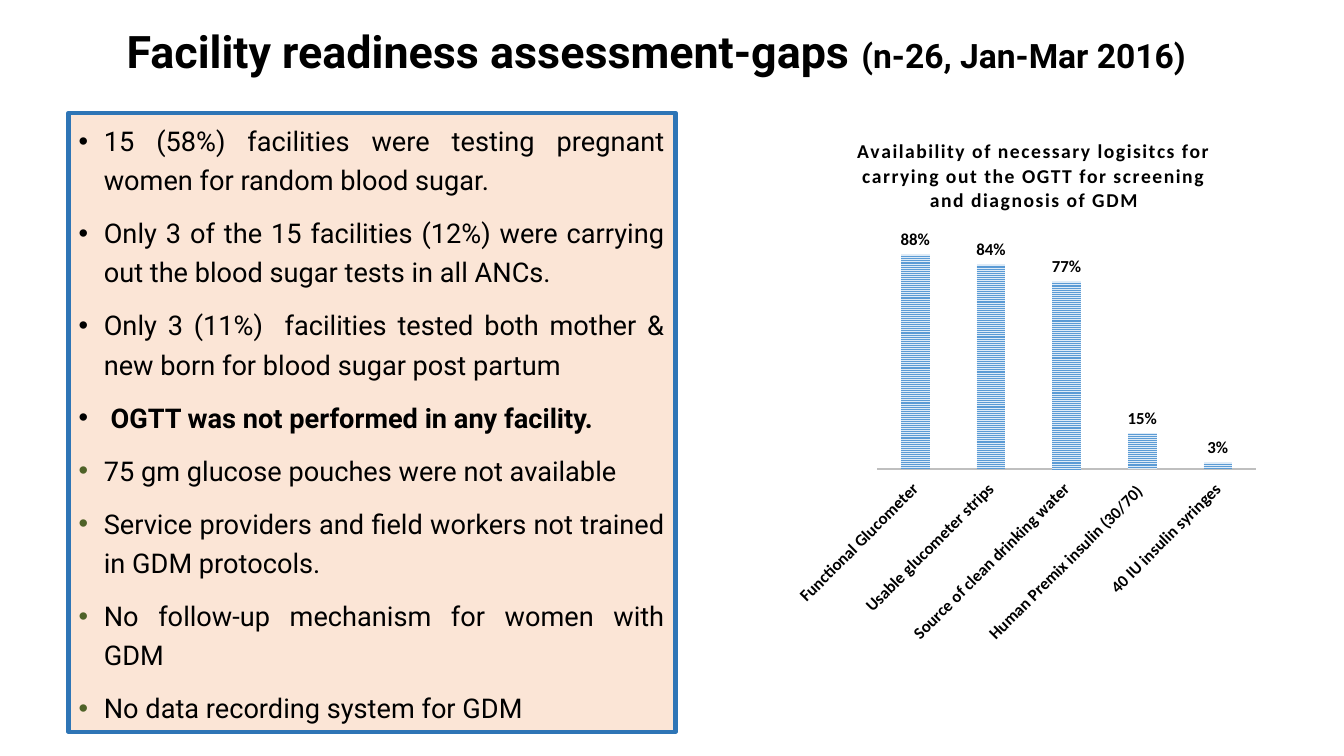
from dataclasses import dataclass

from lxml.etree import SubElement
from pptx import Presentation
from pptx.chart.data import CategoryChartData
from pptx.dml.color import RGBColor
from pptx.enum.chart import XL_CHART_TYPE as ChartType, XL_LABEL_POSITION as LabelPosition
from pptx.enum.chart import XL_TICK_LABEL_POSITION as TickLabels, XL_TICK_MARK as TickMark
from pptx.enum.dml import MSO_PATTERN as Pattern
from pptx.enum.text import MSO_ANCHOR as Anchor, MSO_AUTO_SIZE as AutoSize, PP_ALIGN as Align
from pptx.oxml import parse_xml
from pptx.oxml.ns import nsdecls, qn
from pptx.util import Inches, Pt


@dataclass(frozen=True)
class Theme:
    text_font: str = "Roboto"
    chart_font: str = "Calibri"
    ink: str = "000000"
    panel: str = "FBE5D6"
    border: str = "2E75B6"
    green_bullet: str = "4F6228"
    axis: str = "BFBFBF"
    bar: str = "5B9BD5"
    bar_back: str = "DEEBF7"
    title_size: float = 32
    subtitle_size: float = 24
    body_size: float = 19.4
    chart_title_size: float = 14
    chart_size: float = 10
    label_size: float = 12


THEME = Theme()

TITLE = (("Facility readiness assessment-gaps ", THEME.title_size),
         ("(n-26, Jan-Mar 2016) ", THEME.subtitle_size))

# Each finding: bullet colour, then its (text, bold) runs
FINDINGS = (
    (THEME.ink, [("15 (58%) facilities were testing pregnant women for random blood sugar.", False)]),
    (THEME.ink, [("Only 3 of the 15 facilities (12%) were carrying out the blood sugar tests "
                  "in all ANCs.", False)]),
    (THEME.ink, [("Only 3 (11%)  facilities tested both mother & new born for blood sugar "
                  "post partum", False)]),
    (THEME.ink, [(" ", False), ("OGTT was not performed in any facility. ", True)]),
    (THEME.green_bullet, [("75 gm glucose pouches were not available ", False)]),
    (THEME.green_bullet, [("Service providers and field workers not trained in GDM protocols. ", False)]),
    (THEME.green_bullet, [("No follow-up mechanism for women with GDM", False)]),
    (THEME.green_bullet, [("No data recording system for GDM", False)]),
)

CHART_TITLE = ("Availability of necessary logisitcs for carrying out the OGTT "
               "for screening and diagnosis of GDM")
AVAILABILITY = {
    "Functional Glucometer": 0.88,
    "Usable glucometer strips": 0.84,
    "Source of clean drinking water": 0.77,
    "Human Premix insulin (30/70) ": 0.15,
    "40 IU insulin syringes": 0.03,
}


def apply(target, values):
    for name, value in values.items():
        setattr(target, name, value)


def place(shape, box):
    apply(shape, dict(zip(("left", "top", "width", "height"), map(Inches, box))))


def style_font(font, size, name, bold=False):
    apply(font, {"size": Pt(size), "name": name, "bold": bold})
    font.color.rgb = RGBColor.from_string(THEME.ink)


def add_run(paragraph, text, size, bold):
    run = paragraph.add_run()
    run.text = text
    style_font(run.font, size, THEME.text_font, bold)


def set_bullet(paragraph, color, indent):
    properties = paragraph._p.get_or_add_pPr()
    properties.set("marL", str(indent))
    properties.set("indent", str(-indent))
    bullet_color = SubElement(properties, qn("a:buClr"))
    SubElement(bullet_color, qn("a:srgbClr"), val=color)
    SubElement(properties, qn("a:buFont"), typeface="Arial")
    SubElement(properties, qn("a:buChar"), char="•")


def fill_title(shape, box):
    place(shape, box)
    frame = shape.text_frame
    apply(frame, {"auto_size": AutoSize.NONE, "vertical_anchor": Anchor.MIDDLE})
    paragraph = frame.paragraphs[0]
    apply(paragraph, {"alignment": Align.CENTER, "line_spacing": 0.9})
    for text, size in TITLE:
        add_run(paragraph, text, size, True)


def fill_findings(shape, box):
    place(shape, box)
    shape.fill.solid()
    shape.fill.fore_color.rgb = RGBColor.from_string(THEME.panel)
    shape.line.color.rgb = RGBColor.from_string(THEME.border)
    shape.line.width = Pt(3)
    frame = shape.text_frame
    apply(frame, {"auto_size": AutoSize.NONE, "vertical_anchor": Anchor.TOP})
    for index, (bullet_color, runs) in enumerate(FINDINGS):
        paragraph = frame.add_paragraph() if index else frame.paragraphs[0]
        apply(paragraph, {"alignment": Align.JUSTIFY, "line_spacing": 1.2, "space_before": Pt(10)})
        set_bullet(paragraph, bullet_color, Inches(0.25))
        for text, bold in runs:
            add_run(paragraph, text, THEME.body_size, bold)


def set_layout(element, target, **fractions):
    """Position a chart part by fractions of the chart area."""
    for old in element.findall(qn("c:layout")):
        element.remove(old)
    modes = "".join(f'<c:{side}Mode val="edge"/>' for side in "xy")
    values = "".join(f'<c:{name} val="{value}"/>' for name, value in fractions.items())
    layout = parse_xml(f'<c:layout {nsdecls("c")}><c:manualLayout>{target}{modes}{values}'
                       '</c:manualLayout></c:layout>')
    position = 1 if element.find(qn("c:tx")) is not None else 0
    element.insert(position, layout)


def style_chart_title(chart):
    title = chart.chart_title
    title.include_in_layout = False
    paragraph = title.text_frame.paragraphs[0]
    run = paragraph.add_run()
    run.text = CHART_TITLE
    style_font(run.font, THEME.chart_title_size, THEME.chart_font, True)
    run.font._element.set("spc", "100")
    set_layout(title._element, "", x=0.14, y=0.04)


def style_axes(chart):
    category_axis = chart.category_axis
    apply(category_axis, {"major_tick_mark": TickMark.NONE, "minor_tick_mark": TickMark.NONE,
                          "tick_label_position": TickLabels.LOW})
    style_font(category_axis.tick_labels.font, THEME.label_size, THEME.chart_font, True)
    category_axis.format.line.color.rgb = RGBColor.from_string(THEME.axis)
    category_axis.format.line.width = Pt(1.5)
    body = category_axis._element.find(qn("c:txPr")).find(qn("a:bodyPr"))
    body.set("rot", str(-45 * 60000))
    apply(chart.value_axis, {"visible": False, "has_major_gridlines": False,
                             "minimum_scale": 0, "maximum_scale": 1})


def style_bars(plot):
    apply(plot, {"gap_width": 164, "overlap": -22, "vary_by_categories": False,
                 "has_data_labels": True})
    fill = plot.series[0].format.fill
    fill.patterned()
    fill.pattern = Pattern.NARROW_HORIZONTAL
    fill.fore_color.rgb = RGBColor.from_string(THEME.bar)
    fill.back_color.rgb = RGBColor.from_string(THEME.bar_back)
    labels = plot.data_labels
    apply(labels, {"show_value": True, "number_format": "0%", "number_format_is_linked": False,
                   "position": LabelPosition.OUTSIDE_END})
    style_font(labels.font, THEME.label_size, THEME.chart_font, True)


def add_availability_chart(slide, box):
    data = CategoryChartData(number_format="0%")
    data.categories = AVAILABILITY.keys()
    data.add_series("Series 1", AVAILABILITY.values())
    chart = slide.shapes.add_chart(ChartType.COLUMN_CLUSTERED, *map(Inches, box), data).chart
    chart.has_legend = False
    style_font(chart.font, THEME.chart_size, THEME.chart_font)
    style_chart_title(chart)
    style_axes(chart)
    style_bars(chart.plots[0])
    set_layout(chart._chartSpace.chart.plotArea, '<c:layoutTarget val="inner"/>',
               x=0.19, y=0.21, w=0.79, h=0.46)


def main():
    presentation = Presentation()
    apply(presentation, {"slide_width": Inches(13.33), "slide_height": Inches(7.5)})
    slide = presentation.slides.add_slide(presentation.slide_layouts[1])
    fill_title(slide.shapes.title, (0.13, 0.16, 12.84, 0.75))
    fill_findings(slide.placeholders[1], (0.68, 1.12, 6.02, 6.14))
    add_availability_chart(slide, (7.8, 1.12, 4.75, 5.28))
    presentation.save("out.pptx")


if __name__ == "__main__":
    main()
